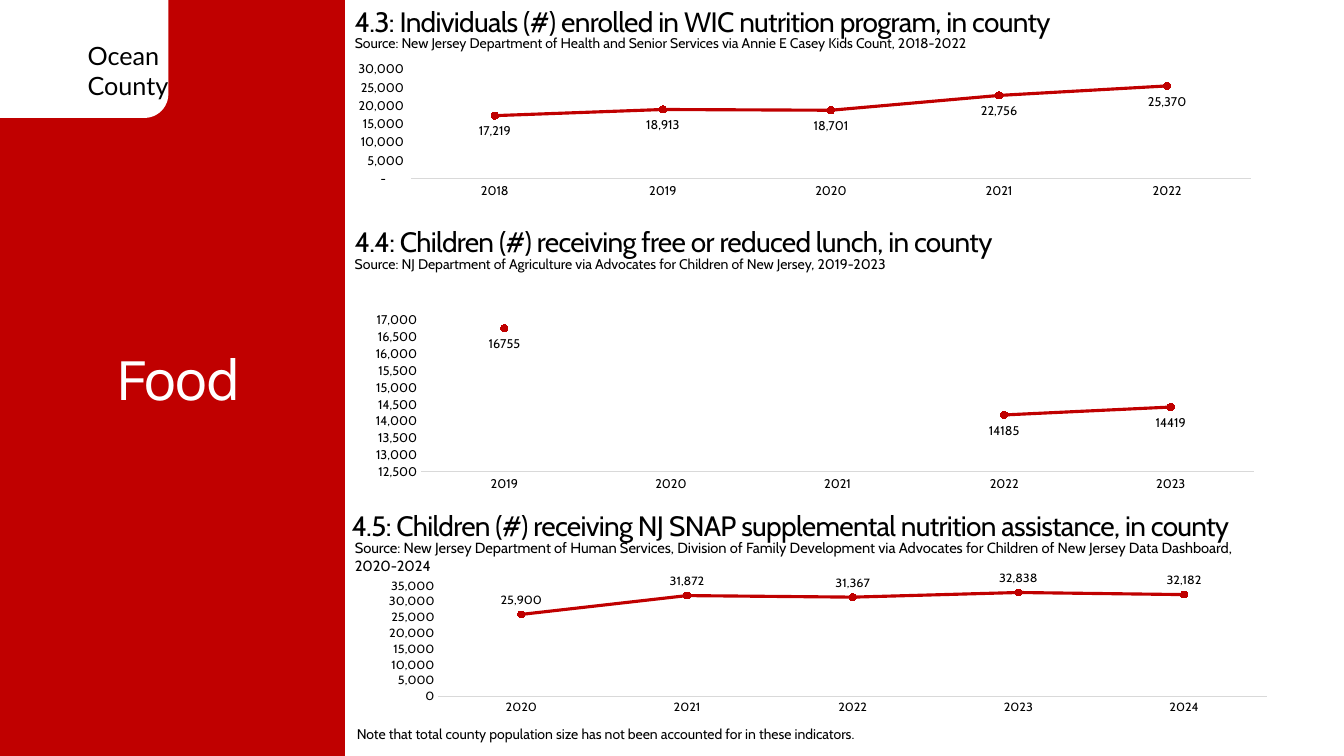
"""Build the Ocean County food slide with three indicator line charts."""
from lxml.etree import SubElement
from pptx import Presentation
from pptx.chart.data import CategoryChartData
from pptx.dml.color import RGBColor
from pptx.enum.chart import XL_CHART_TYPE, XL_LABEL_POSITION, XL_MARKER_STYLE, XL_TICK_MARK
from pptx.enum.shapes import MSO_SHAPE
from pptx.enum.text import MSO_ANCHOR, PP_ALIGN
from pptx.oxml.ns import qn
from pptx.util import Inches, Pt

RED = RGBColor(0xC0, 0x00, 0x00)
WHITE = RGBColor(0xFF, 0xFF, 0xFF)
BLACK = RGBColor(0x00, 0x00, 0x00)
GREY = RGBColor(0xD9, 0xD9, 0xD9)
ACCOUNTING = '_(* #,##0_);_(* \\(#,##0\\);_(* "-"??_);_(@_)'
THOUSANDS = "#,##0"
BELOW, ABOVE = XL_LABEL_POSITION.BELOW, XL_LABEL_POSITION.ABOVE

prs = Presentation()
prs.slide_width, prs.slide_height = Inches(13.33), Inches(7.5)
s = prs.slides.add_slide(prs.slide_layouts[6])


def add_text(box, lines, size, font="Cabin", color=BLACK, spacing=0):
    """Add a text box with one paragraph per line."""
    tf = s.shapes.add_textbox(*map(Inches, box)).text_frame
    tf.word_wrap = True
    tf.text = lines
    for p in tf.paragraphs:
        p.font.size, p.font.name = Pt(size), font
        p.font.color.rgb = color
        if spacing:
            for r in p.runs:
                r._r.get_or_add_rPr().set("spc", str(int(spacing * 100)))
    return tf


def style_font(font, size=9, name="Cabin"):
    """Set the font of a chart part."""
    font.size, font.name = Pt(size), name
    font.color.rgb = BLACK


panels = [
    (MSO_SHAPE.RECTANGLE, (0, 0, 3.42, 7.5), RED),
    (MSO_SHAPE.ROUNDED_RECTANGLE, (-0.33, -0.25, 2, 1.42), WHITE),
]
for kind, box, color in panels:
    sp = s.shapes.add_shape(kind, *map(Inches, box))
    sp.shadow.inherit = False
    sp.fill.solid()
    sp.fill.fore_color.rgb = color
    sp.line.fill.background()

add_text((0.77, 0.35, 1, 0.71), "Ocean\nCounty", 18, "Lato")
tf = add_text((0, 0.78, 3.55, 6), "Food", 44, "Karla", WHITE, -2)
tf.vertical_anchor = MSO_ANCHOR.MIDDLE
tf.paragraphs[0].alignment = PP_ALIGN.CENTER
tf.paragraphs[0].line_spacing = 0.9

indicators = [
    dict(title="4.3: Individuals (#) enrolled in WIC nutrition program, in county",
         title_at=(3.42, 0),
         source="Source: New Jersey Department of Health and Senior Services via "
                "Annie E Casey Kids Count, 2018-2022",
         source_box=(3.42, 0.29, 9.19, 0.27), source_size=10,
         box=(3.47, 0.58, 9.15, 1.53), plot=(0.066, 0.069, 0.911, 0.71),
         first_year=2018, values=(17219, 18913, 18701, 22756, 25370),
         scale=(0, 30000, 5000), axis_format=ACCOUNTING,
         label_format=ACCOUNTING, label_position=BELOW),
    dict(title="4.4: Children (#) receiving free or reduced lunch, in county",
         title_at=(3.42, 2.18),
         source="Source: NJ Department of Agriculture via Advocates for Children "
                "of New Jersey, 2019-2023",
         source_box=(3.42, 2.49, 9.86, 0.27), source_size=10,
         box=(3.55, 3.06, 9.08, 1.86), plot=(0.069, 0.062, 0.91, 0.81),
         first_year=2019, values=(16755, None, None, 14185, 14419),
         scale=(12500, 17000, 500), axis_format=THOUSANDS,
         label_format="General", label_position=BELOW),
    dict(title="4.5: Children (#) receiving NJ SNAP supplemental nutrition assistance, in county",
         title_at=(3.39, 5),
         source="Source: New Jersey Department of Human Services, Division of Family "
                "Development via Advocates for Children of New Jersey Data Dashboard, 2020-2024",
         source_box=(3.42, 5.3, 9.22, 0.66), source_size=10.5,
         box=(3.55, 5.66, 9.08, 1.55), plot=(0.088, 0.046, 0.905, 0.748),
         first_year=2020, values=(25900, 31872, 31367, 32838, 32182),
         scale=(0, 35000, 5000), axis_format=THOUSANDS,
         label_format=THOUSANDS, label_position=ABOVE),
]

for item in indicators:
    add_text((*item["title_at"], 9.86, 0.44), item["title"], 20, spacing=-0.5)
    add_text(item["source_box"], item["source"], item["source_size"])

    data = CategoryChartData()
    data.categories = [str(item["first_year"] + i) for i in range(5)]
    data.add_series("Series 1", item["values"])
    chart = s.shapes.add_chart(
        XL_CHART_TYPE.LINE_MARKERS, *map(Inches, item["box"]), data).chart
    chart.has_legend = chart.has_title = False
    style_font(chart.font, 10, "Calibri")

    years, counts = chart.category_axis, chart.value_axis
    for axis in (years, counts):
        axis.major_tick_mark = axis.minor_tick_mark = XL_TICK_MARK.NONE
        axis.has_major_gridlines = False
        style_font(axis.tick_labels.font)
    years.format.line.color.rgb = GREY
    years.format.line.width = Pt(0.75)
    counts.format.line.fill.background()
    counts.minimum_scale, counts.maximum_scale, counts.major_unit = item["scale"]
    counts.tick_labels.number_format = item["axis_format"]
    counts.tick_labels.number_format_is_linked = False

    plot = chart.plots[0]
    plot.vary_by_categories = False
    series = plot.series[0]
    series.smooth = False
    series.format.line.color.rgb = RED
    series.format.line.width = Pt(2.25)
    series.marker.style, series.marker.size = XL_MARKER_STYLE.CIRCLE, 5
    series.marker.format.fill.solid()
    series.marker.format.fill.fore_color.rgb = RED
    series.marker.format.line.color.rgb = RED

    labels = series.data_labels
    labels.show_value = True
    labels.position = item["label_position"]
    labels.number_format = item["label_format"]
    labels.number_format_is_linked = False
    style_font(labels.font)

    area = chart._chartSpace.chart.plotArea
    for old in area.findall(qn("c:layout")):
        area.remove(old)
    layout = SubElement(area, qn("c:layout"))
    area.insert(0, layout)
    manual = SubElement(layout, qn("c:manualLayout"))
    settings = [("layoutTarget", "inner"), ("xMode", "edge"), ("yMode", "edge"),
                *zip("xywh", item["plot"])]
    for tag, value in settings:
        SubElement(manual, qn(f"c:{tag}")).set("val", str(value))

add_text((3.44, 7.15, 7.28, 0.44),
         "Note that total county population size has not been accounted for in these indicators.", 10)

prs.save("out.pptx")
